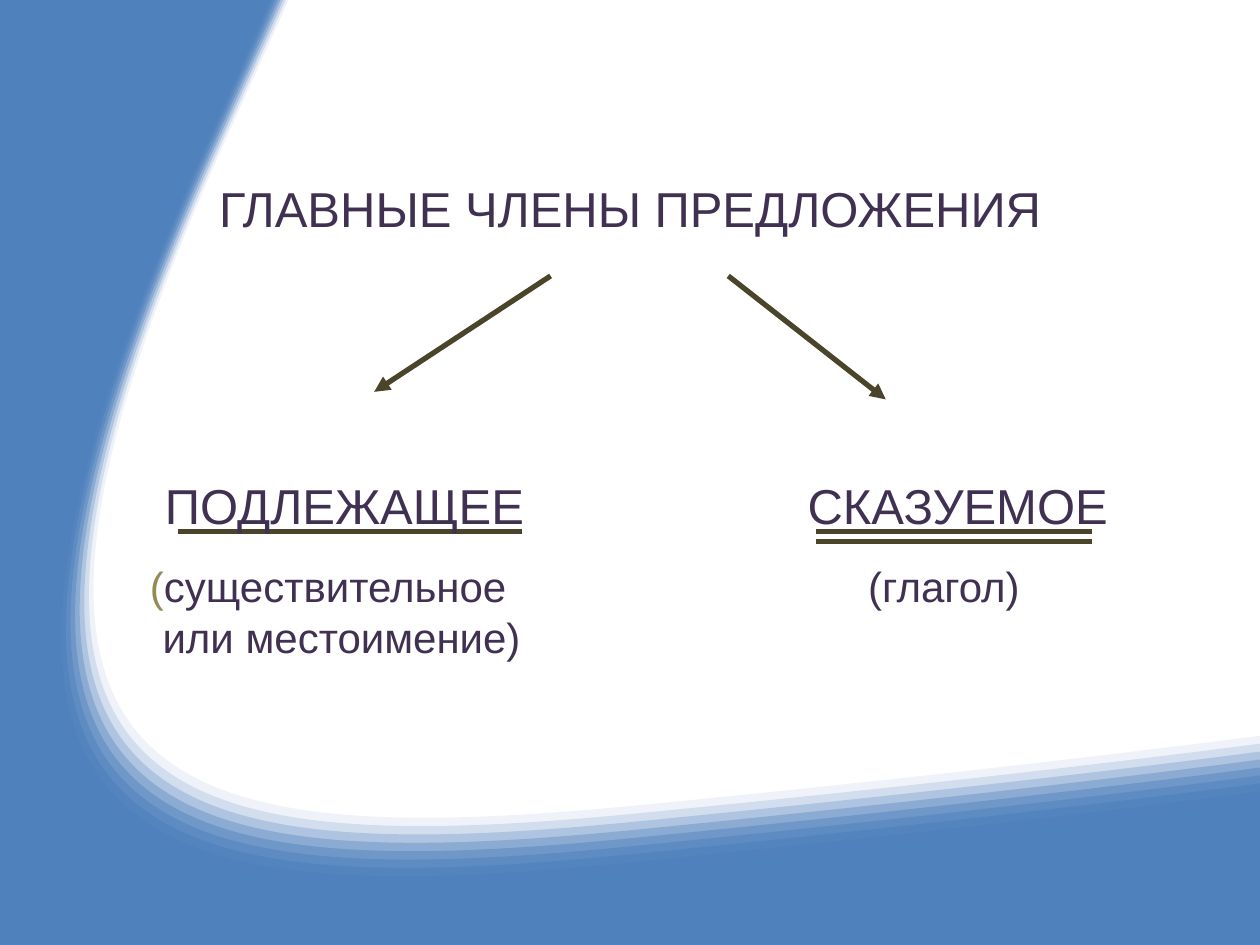
import dataclasses
import lxml.etree
import pptx
import pptx.dml.color
import pptx.enum.shapes
import pptx.enum.text
import pptx.oxml.ns
import pptx.util
from pptx.util import Inches


@dataclasses.dataclass(frozen=True)
class Theme:
    font: str = "Arial"
    heading: int = 28
    body: int = 24
    line_width: int = 3
    blue: str = "4F81BD"
    purple: str = "403152"
    olive: str = "948A54"
    brown: str = "4A452A"


theme = Theme()
rgb = pptx.dml.color.RGBColor.from_string
qn = pptx.oxml.ns.qn

presentation = pptx.Presentation()
presentation.slide_width = Inches(10)
presentation.slide_height = Inches(7.5)
slide = presentation.slides.add_slide(presentation.slide_layouts[6])


def add_text(paragraphs, left, top, width, height, size=theme.body,
             align=pptx.enum.text.PP_ALIGN.LEFT, later_indent=0):
    """Each paragraph is a list of (text, colour) runs; later ones may be indented."""
    frame = slide.shapes.add_textbox(
        Inches(left), Inches(top), Inches(width), Inches(height)).text_frame
    frame.word_wrap = True
    frame.margin_left = frame.margin_right = frame.margin_top = frame.margin_bottom = 0
    for index, runs in enumerate(paragraphs):
        paragraph = frame.add_paragraph() if index else frame.paragraphs[0]
        paragraph.alignment = align
        if index and later_indent:
            paragraph._p.get_or_add_pPr().set("marL", str(Inches(later_indent)))
        for text, color in runs:
            run = paragraph.add_run()
            run.text = text
            run.font.name = theme.font
            run.font.size = pptx.util.Pt(size)
            run.font.color.rgb = rgb(color)


def add_segment(outline, tag, points):
    segment = lxml.etree.SubElement(outline, qn(tag))
    for x, y in points:
        point = lxml.etree.SubElement(segment, qn("a:pt"))
        point.set("x", str(Inches(x)))
        point.set("y", str(Inches(y)))


# Blue frame, with bands of growing opacity along its curved edge.
# Each edge is a start point followed by three cubic Bézier curves.
frame_edge = [(10, 6.56), (10, 6.56), (8.06, 6.82), (4.91, 7.14), (0.8, 7.55),
              (-1.21, 7.12), (1.47, 1.15), (1.8, 0.41), (1.99, 0), (1.99, 0)]
faint_edge = [(10, 5.84), (9.98, 5.84), (8.14, 6.09), (5.18, 6.38), (1.21, 6.78),
              (-0.55, 6.32), (1.8, 1.09), (2.11, 0.4), (2.29, 0.01), (2.29, 0)]
solid_edge = [(10, 6.47), (9.74, 6.51), (7.86, 6.75), (4.98, 7.04), (0.92, 7.45),
              (-1.07, 7.03), (1.58, 1.14), (1.86, 0.52), (2.03, 0.11), (2.08, 0)]
band_count = 11
corners = [(0, 0), (10, 0), (10, 7.5), (0, 7.5)]

areas = [(frame_edge, [(0, 0), (0, 7.5), (10, 7.5)], 1)]
for band in range(1, band_count + 1):
    share = (band - 1) / (band_count - 1)
    band_edge = [tuple(a + (b - a) * share for a, b in zip(faint, solid))
                 for faint, solid in zip(faint_edge, solid_edge)]
    areas.append((band_edge, frame_edge[::-1], band / band_count))

for edge, way_back, opacity in areas:
    slide_corners = [(Inches(x), Inches(y)) for x, y in corners]
    builder = slide.shapes.build_freeform(*slide_corners[0])
    builder.add_line_segments(slide_corners[1:], close=True)
    shape = builder.convert_to_shape()
    shape.shadow.inherit = False
    shape.line.fill.background()
    shape.fill.solid()
    shape.fill.fore_color.rgb = rgb(theme.blue)

    outline = next(shape._element.iter(qn("a:path")))
    for segment in list(outline):
        outline.remove(segment)
    add_segment(outline, "a:moveTo", edge[:1])
    for first in (1, 4, 7):
        add_segment(outline, "a:cubicBezTo", edge[first:first + 3])
    if way_back[0] == (0, 0):
        for corner in way_back:
            add_segment(outline, "a:lnTo", [corner])
    else:
        add_segment(outline, "a:lnTo", way_back[:1])
        for first in (1, 4, 7):
            add_segment(outline, "a:cubicBezTo", way_back[first:first + 3])
    lxml.etree.SubElement(outline, qn("a:close"))
    if opacity < 1:
        color = shape._element.spPr.find(qn("a:solidFill"))[0]
        lxml.etree.SubElement(color, qn("a:alpha")).set("val", str(round(opacity * 100000)))

# Arrows from the title, then one line under the subject and two under the predicate
lines = [
    (4.37, 2.19, 2.97, 3.11, True),
    (5.78, 2.19, 7.03, 3.17, True),
    (1.41, 4.22, 4.14, 4.22, False),
    (6.48, 4.22, 8.67, 4.22, False),
    (6.48, 4.3, 8.67, 4.3, False),
]
for *ends, has_arrow in lines:
    connector = slide.shapes.add_connector(
        pptx.enum.shapes.MSO_CONNECTOR.STRAIGHT, *map(Inches, ends))
    connector.line.color.rgb = rgb(theme.brown)
    connector.line.width = pptx.util.Pt(theme.line_width)
    if has_arrow:
        lxml.etree.SubElement(connector.line._get_or_add_ln(), qn("a:tailEnd")).set("type", "triangle")
    lxml.etree.SubElement(connector._element.spPr, qn("a:effectLst"))

add_text([[("ГЛАВНЫЕ ЧЛЕНЫ ПРЕДЛОЖЕНИЯ", theme.purple)]], 0.47, 1.42, 9.06, 0.45,
         size=theme.heading, align=pptx.enum.text.PP_ALIGN.CENTER)
add_text([[("ПОДЛЕЖАЩЕЕ", theme.purple)]], 1.31, 3.77, 3.2, 0.45, size=theme.heading)
add_text([[("СКАЗУЕМОЕ", theme.purple)]], 6.41, 3.77, 2.8, 0.45, size=theme.heading)
add_text([[("(", theme.olive), ("существительное", theme.purple)],
          [("или местоимение)", theme.purple)]], 1.19, 4.45, 3.4, 0.8, later_indent=0.1)
add_text([[("(глагол)", theme.purple)]], 6.89, 4.45, 1.6, 0.4)

presentation.save("out.pptx")
